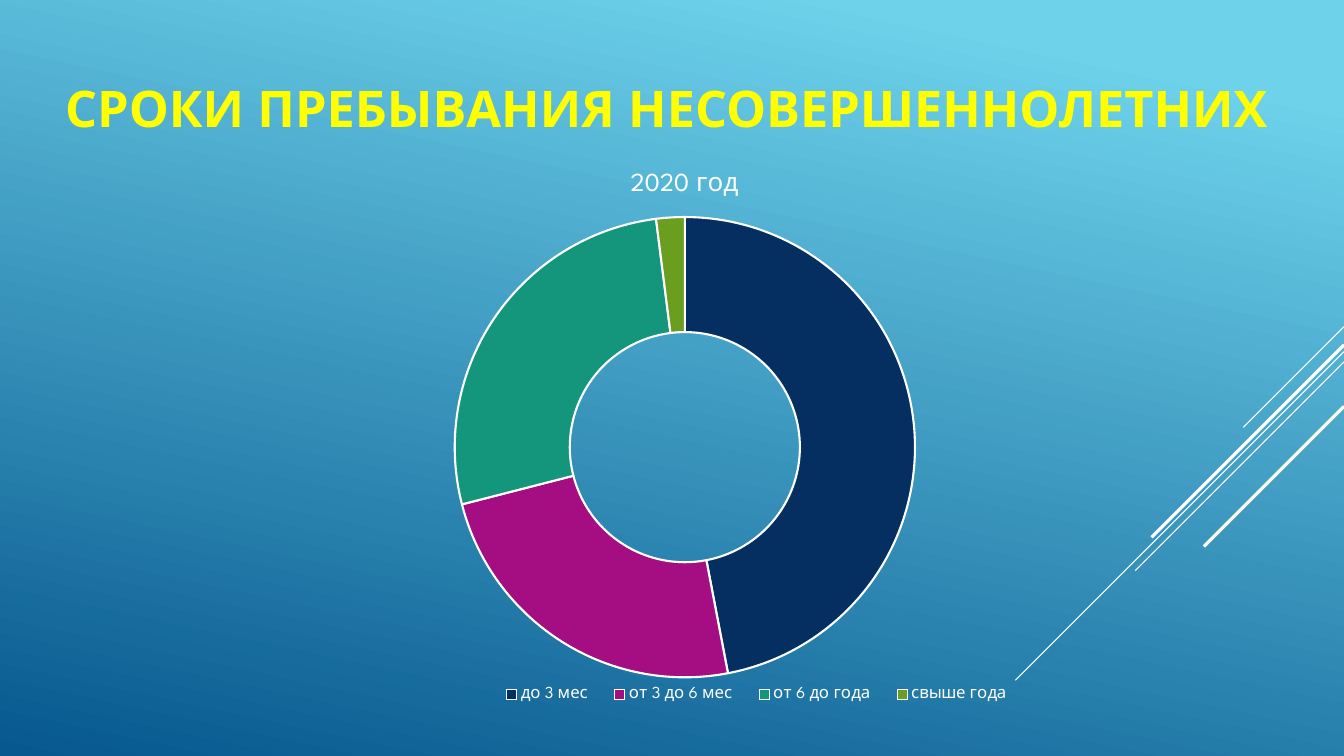
from dataclasses import dataclass

from lxml import etree
from pptx import Presentation
from pptx import util as u
from pptx.chart.chart import Chart
from pptx.chart.data import CategoryChartData
from pptx.dml.color import RGBColor
from pptx.enum import chart as charts, shapes, text
from pptx.oxml import ns
from pptx.slide import Slide

COLOURS = {
    "sky": "6ED2EB",
    "deep": "06588E",
    "white": "FFFFFF",
    "yellow": "FFFF00",
    "navy": "052F61",
    "magenta": "A50E82",
    "teal": "14967C",
    "olive": "6A9E1F",
}
FONT = "League Spartan"
SLIDE_WIDTH, SLIDE_HEIGHT = 33.87, 19.05


@dataclass(frozen=True)
class Ray:
    """A 45-degree line running down and left from the right slide edge, in cm."""
    top: float
    run: float
    weight: float


@dataclass(frozen=True)
class Stay:
    label: str
    share: int
    colour: str


@dataclass(frozen=True)
class Frame:
    """A rectangle given as fractions of the chart area."""
    x: float
    y: float
    w: float
    h: float


RAYS = [
    Ray(8.23, 2.54, 0.75),
    Ray(8.86, 8.28, 0.75),
    Ray(9.12, 5.26, 0.75),
    Ray(8.69, 4.85, 2.25),
    Ray(10.24, 3.53, 2.25),
]
STAYS = [
    Stay("до 3 мес", 47, "navy"),
    Stay("от 3 до 6 мес", 24, "magenta"),
    Stay("от 6 до года", 27, "teal"),
    Stay("свыше года", 2, "olive"),
]
RING_FRAME = Frame(0.29, 0.12, 0.42, 0.8)
LEGEND_FRAME = Frame(0.32, 0.92, 0.49, 0.06)


def rgb(name: str) -> RGBColor:
    return RGBColor.from_string(COLOURS[name])


def style_font(font, size: float, colour: str, bold: bool = False) -> None:
    font.name = FONT
    font.size = u.Pt(size)
    font.bold = bold
    font.color.rgb = rgb(colour)


def paint_background(page: Slide) -> None:
    fill = page.background.fill
    fill.gradient()
    fill.gradient_angle = 258
    for stop, (position, colour) in zip(fill.gradient_stops, [(0.1, "sky"), (1, "deep")]):
        stop.position = position
        stop.color.rgb = rgb(colour)


def draw_ray(page: Slide, ray: Ray) -> None:
    line = page.shapes.add_connector(
        shapes.MSO_CONNECTOR.STRAIGHT,
        u.Cm(SLIDE_WIDTH), u.Cm(ray.top),
        u.Cm(SLIDE_WIDTH - ray.run), u.Cm(ray.top + ray.run),
    )
    line.line.color.rgb = rgb("white")
    line.line.width = u.Pt(ray.weight)
    etree.SubElement(line.element.find(ns.qn("p:spPr")), ns.qn("a:effectLst"))


def write_title(page: Slide) -> None:
    box = page.shapes.title
    box.left, box.top = u.Cm(1.37), u.Cm(0.61)
    box.width, box.height = u.Cm(30.86), u.Cm(4.19)
    frame = box.text_frame
    frame.word_wrap = True
    frame.auto_size = text.MSO_AUTO_SIZE.NONE
    frame.vertical_anchor = text.MSO_ANCHOR.MIDDLE
    para = frame.paragraphs[0]
    para.alignment = text.PP_ALIGN.CENTER
    span = para.add_run()
    span.text = "СРОКИ ПРЕБЫВАНИЯ НЕСОВЕРШЕННОЛЕТНИХ"
    style_font(span.font, 36, "yellow", bold=True)


def place_part(chart: Chart, tag: str, index: int, frame: Frame) -> None:
    """Fix a chart part at a frame; index is where its layout element belongs."""
    part = next(chart.element.iter(ns.qn(tag)))
    for old in part.findall(ns.qn("c:layout")):
        part.remove(old)
    layout = etree.Element(ns.qn("c:layout"))
    manual = etree.SubElement(layout, ns.qn("c:manualLayout"))
    settings = [("xMode", "edge"), ("yMode", "edge"),
                ("x", frame.x), ("y", frame.y), ("w", frame.w), ("h", frame.h)]
    for name, value in settings:
        etree.SubElement(manual, ns.qn(f"c:{name}")).set("val", str(value))
    part.insert(index, layout)


def add_stay_chart(page: Slide) -> None:
    data = CategoryChartData()
    data.categories = [stay.label for stay in STAYS]
    data.add_series("2020 год", [stay.share for stay in STAYS])
    chart = page.shapes.add_chart(
        charts.XL_CHART_TYPE.DOUGHNUT,
        u.Cm(3.33), u.Cm(3.73), u.Cm(27.86), u.Cm(14.5), data,
    ).chart
    style_font(chart.font, 10, "white")

    chart.has_title = True
    span = chart.chart_title.text_frame.paragraphs[0].add_run()
    span.text = "2020 год"
    style_font(span.font, 18.6, "white")
    chart.chart_title.include_in_layout = False

    chart.has_legend = True
    chart.legend.position = charts.XL_LEGEND_POSITION.BOTTOM
    chart.legend.include_in_layout = False
    style_font(chart.legend.font, 12, "white")

    plot = chart.plots[0]
    plot.vary_by_categories = True
    for index, stay in enumerate(STAYS):
        style = plot.series[0].points[index].format
        style.fill.solid()
        style.fill.fore_color.rgb = rgb(stay.colour)
        style.line.color.rgb = rgb("white")
        style.line.width = u.Pt(1.5)

    next(chart.element.iter(ns.qn("c:holeSize"))).set("val", "75")
    place_part(chart, "c:plotArea", 0, RING_FRAME)
    place_part(chart, "c:legend", 1, LEGEND_FRAME)


def main() -> None:
    deck = Presentation()
    deck.slide_width, deck.slide_height = u.Cm(SLIDE_WIDTH), u.Cm(SLIDE_HEIGHT)
    page = deck.slides.add_slide(deck.slide_layouts.get_by_name("Title Only"))
    paint_background(page)
    for ray in RAYS:
        draw_ray(page, ray)
    write_title(page)
    add_stay_chart(page)
    deck.save("out.pptx")


if __name__ == "__main__":
    main()
